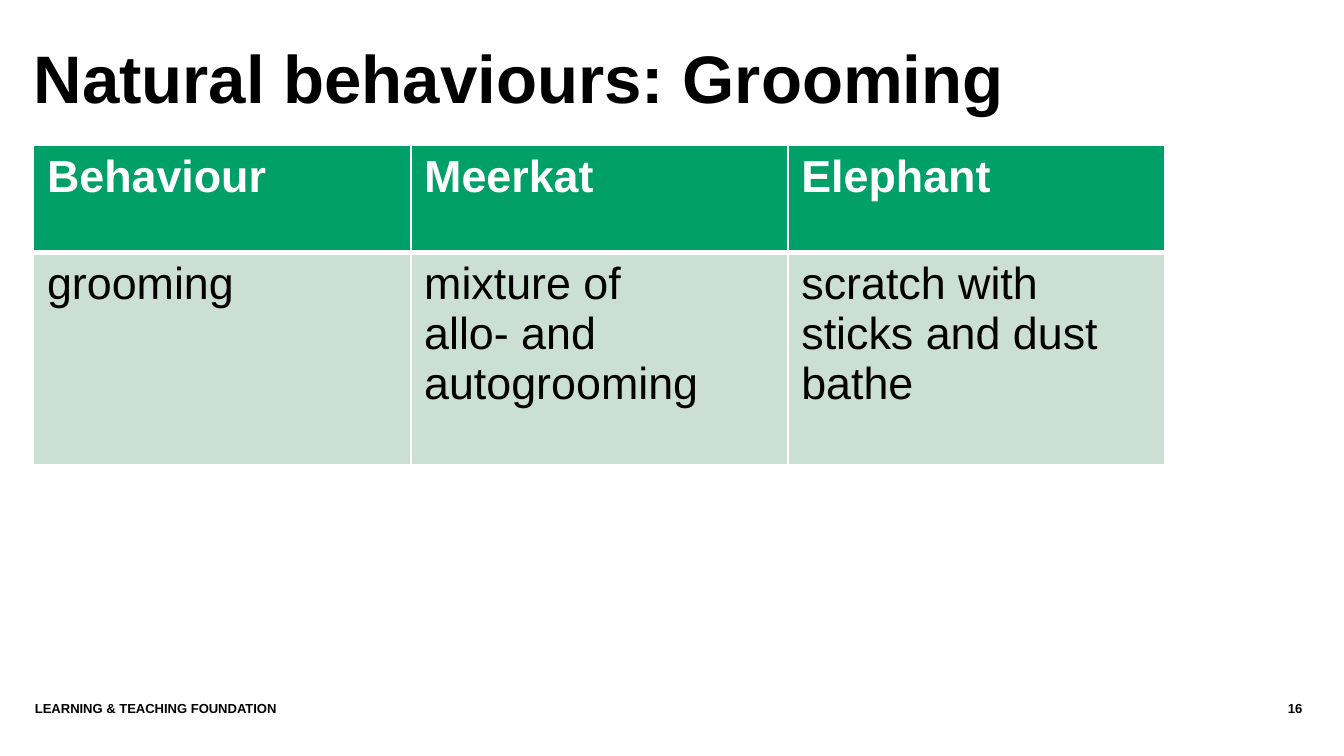
from pptx import Presentation
from pptx.dml.color import RGBColor
from pptx.enum.text import PP_ALIGN
from pptx.oxml import parse_xml
from pptx.oxml.ns import nsdecls
from pptx.util import Inches, Pt

BLACK, WHITE = "000000", "FFFFFF"
TEXTS = [
    ("LEARNING & TEACHING FOUNDATION", (0.26, 5.21, 8.41, 0.3), 7, PP_ALIGN.LEFT),
    ("16", (8.7, 5.21, 0.99, 0.3), 7, PP_ALIGN.RIGHT),
    ("Natural behaviours: Grooming", (0.25, 0.27, 9.23, 0.76), 36, PP_ALIGN.LEFT),
]
BEHAVIOURS = [
    ("Behaviour", "Meerkat", "Elephant"),
    ("grooming", "mixture of \vallo- and autogrooming", "scratch with sticks and dust bathe"),
]
ROW_STYLES = [
    {"height": 0.8, "fill": "00A068", "color": WHITE, "bold": True, "top": 1, "bottom": 3},
    {"height": 1.58, "fill": "CCDFD4", "color": BLACK, "bold": False, "top": 3, "bottom": 1},
]
TABLE_LEFT, TABLE_TOP, TABLE_WIDTH = 0.25, 1.08, 8.42


def rgb(color):
    """Return the colour for a hex string."""
    return RGBColor.from_string(color)


def style_paragraph(paragraph, size, color, bold):
    """Set the font of a whole paragraph."""
    font = paragraph.font
    font.name, font.size, font.bold = "Arial", Pt(size), bold
    font.color.rgb = rgb(color)


def add_text(slide, text, box, size, alignment):
    """Add a bold black text box."""
    frame = slide.shapes.add_textbox(*map(Inches, box)).text_frame
    frame.word_wrap = True
    frame.margin_left = frame.margin_right = frame.margin_top = frame.margin_bottom = 0
    frame.text = text
    paragraph = frame.paragraphs[0]
    paragraph.alignment = alignment
    style_paragraph(paragraph, size, BLACK, True)


def set_borders(cell, top, bottom):
    """Draw white borders around a cell."""
    properties = cell._tc.get_or_add_tcPr()
    widths = {"lnL": 1, "lnR": 1, "lnT": top, "lnB": bottom}
    for index, (side, width) in enumerate(widths.items()):
        properties.insert(index, parse_xml(
            f'<a:{side} {nsdecls("a")} w="{Pt(width)}"><a:solidFill>'
            f'<a:srgbClr val="{WHITE}"/></a:solidFill></a:{side}>'))


def add_behaviour_table(slide):
    """Add the table comparing the animals."""
    column_count = len(BEHAVIOURS[0])
    height = sum(style["height"] for style in ROW_STYLES)
    table = slide.shapes.add_table(
        len(BEHAVIOURS), column_count, Inches(TABLE_LEFT), Inches(TABLE_TOP),
        Inches(TABLE_WIDTH), Inches(height)).table
    for column in table.columns:
        column.width = Inches(TABLE_WIDTH / column_count)
    for row, texts, style in zip(table.rows, BEHAVIOURS, ROW_STYLES):
        row.height = Inches(style["height"])
        for cell, text in zip(row.cells, texts):
            cell.text = text
            cell.fill.solid()
            cell.fill.fore_color.rgb = rgb(style["fill"])
            style_paragraph(cell.text_frame.paragraphs[0], 24, style["color"], style["bold"])
            set_borders(cell, style["top"], style["bottom"])


def main():
    """Build and save the slide."""
    presentation = Presentation()
    presentation.slide_width = Inches(10)
    presentation.slide_height = Inches(10 * 9 / 16)
    slide = presentation.slides.add_slide(presentation.slide_layouts[6])
    for text in TEXTS:
        add_text(slide, *text)
    add_behaviour_table(slide)
    presentation.save("out.pptx")


if __name__ == "__main__":
    main()
